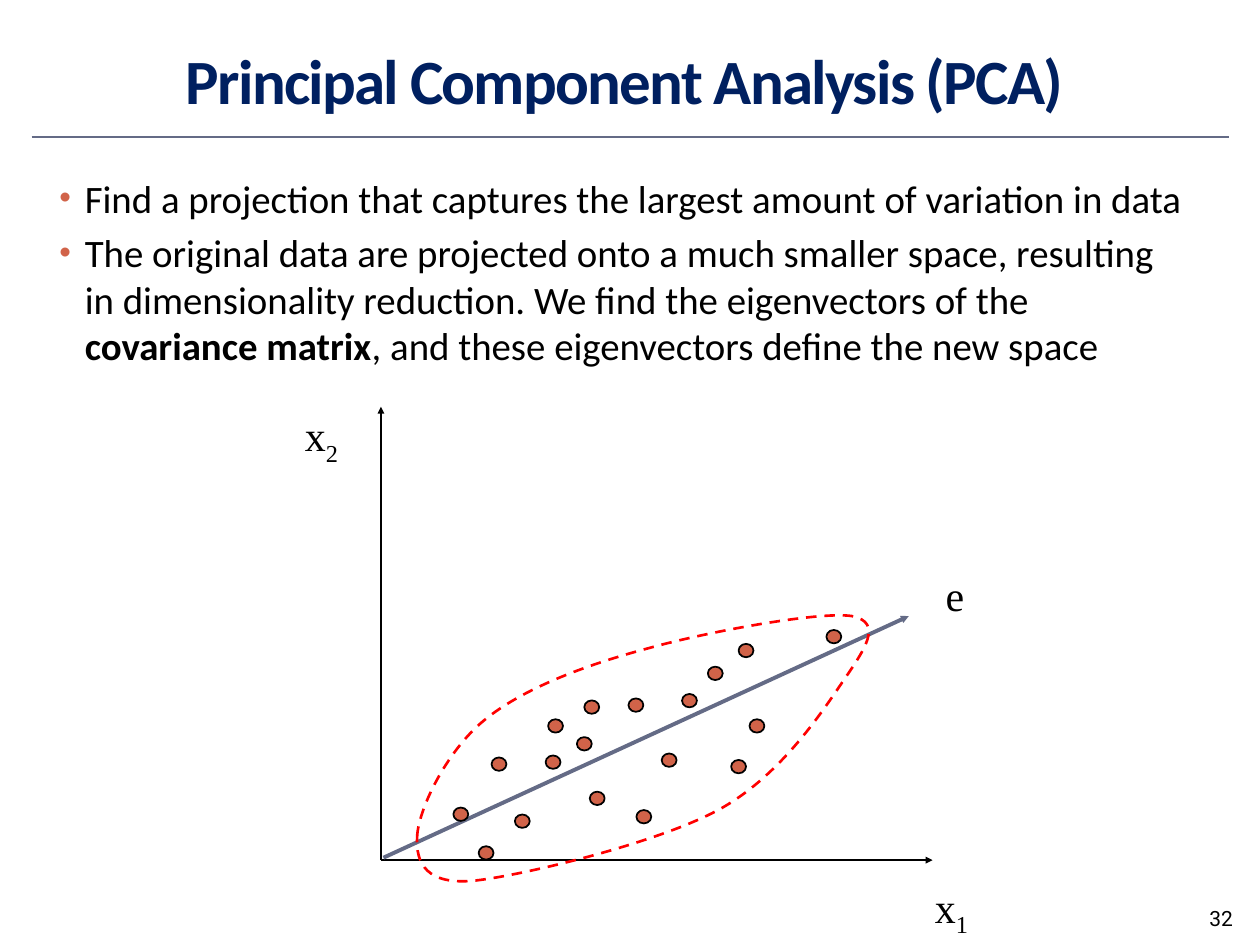
from lxml import etree
from pptx import Presentation
from pptx.dml.color import RGBColor
from pptx.enum import dml, shapes, text
from pptx.oxml import ns
from pptx.util import Cm, Pt

# Content (lengths in cm)
COLORS = {"navy": "002060", "slate": "646B86", "rust": "D16349",
          "red": "FF0000", "black": "000000"}
TITLE = "Principal Component Analysis (PCA)"
# A span is (text, style); style is "", "bold" or "sub"
BULLETS = [
    [("Find a projection that captures the largest amount of variation in data", "")],
    [("The original data are projected onto a much smaller space, resulting in "
      "dimensionality reduction. We find the eigenvectors of the ", ""),
     ("covariance matrix", "bold"),
     (", and these eigenvectors define the new space", "")],
]
PAGE_NUMBER = "32"
LABELS = [  # spans, left, top, width
    ([("x", ""), ("2", "sub")], 5.77, 8.13, 1.42),
    ([("x", ""), ("1", "sub")], 18.47, 17.63, 1.42),
    ([("e", "")], 18.73, 11.28, 1.04),
]
LABEL_HEIGHT = 1.42
ORIGIN = (7.68, 17.34)
LINES = [  # start, end, colour, points, arrow
    ((0.64, 2.76), (24.77, 2.76), "slate", 1.5, False),
    (ORIGIN, (7.68, 8.2), "black", 1, True),
    (ORIGIN, (18.8, 17.34), "black", 1, True),
    ((7.73, 17.29), (18.32, 12.42), "slate", 2.25, True),
]
DOT_SIZE = (0.3, 0.27)
DOTS = [  # left, top
    (9.91, 15.27), (11.05, 14.5), (9.14, 16.28), (11.63, 14.86), (11, 15.23),
    (13.34, 15.19), (12.83, 16.33), (11.89, 15.96), (12.67, 14.08),
    (15.11, 14.5), (16.66, 12.7), (10.38, 16.42), (13.75, 13.99),
    (14.89, 12.98), (11.78, 14.12), (14.27, 13.44), (14.74, 15.32),
    (9.65, 17.06),
]
CLOUD_START = (8.41, 16.87)
CLOUD_CURVES = [  # two control points and an end point
    ((8.43, 16.33), (8.99, 15.16), (9.75, 14.53)),
    ((10.52, 13.89), (11.79, 13.41), (13.03, 13.08)),
    ((14.27, 12.73), (16.54, 12.32), (17.17, 12.42)),
    ((17.83, 12.55), (17.42, 13.11), (16.97, 13.77)),
    ((16.54, 14.4), (15.7, 15.67), (14.48, 16.33)),
    ((13.26, 16.99), (10.62, 17.63), (9.6, 17.75)),
    ((8.59, 17.86), (8.38, 17.4), CLOUD_START),
]


def color(name):
    return RGBColor.from_string(COLORS[name])


def add_child(parent, tag, **attributes):
    child = etree.SubElement(parent, ns.qn(tag))
    for key, value in attributes.items():
        child.set(key, value)
    return child


def add_bullet(para):
    para.space_before = Pt(4.44)
    props = para._p.get_or_add_pPr()
    props.set("marL", str(Cm(0.51)))
    props.set("indent", str(-Cm(0.51)))
    add_child(add_child(props, "a:buClr"), "a:srgbClr", val=COLORS["rust"])
    add_child(props, "a:buSzPct", val="85000")
    add_child(props, "a:buFont", typeface="Arial")
    add_child(props, "a:buChar", char="•")


def add_text(page, paragraphs, place, *, font, size, tint="black", bold=False,
             align=text.PP_ALIGN.LEFT, anchor=text.MSO_ANCHOR.TOP,
             wrap=True, spacing=None, bullets=False):
    frame = page.shapes.add_textbox(*map(Cm, place)).text_frame
    frame.word_wrap = wrap
    frame.vertical_anchor = anchor
    if not wrap:
        frame.auto_size = text.MSO_AUTO_SIZE.SHAPE_TO_FIT_TEXT
    for index, spans in enumerate(paragraphs):
        para = frame.add_paragraph() if index else frame.paragraphs[0]
        para.alignment = align
        if bullets:
            add_bullet(para)
        for words, style in spans:
            span = para.add_run()
            span.text = words
            span.font.name = font
            span.font.size = Pt(size)
            span.font.bold = bold or style == "bold"
            span.font.color.rgb = color(tint)
            props = span._r.get_or_add_rPr()
            if style == "sub":
                props.set("baseline", "-25000")
            if spacing is not None:
                props.set("spc", str(spacing * 100))


def add_line(page, start, end, tint, width, arrow):
    line = page.shapes.add_connector(shapes.MSO_CONNECTOR.STRAIGHT,
                                     *map(Cm, start + end))
    line.line.color.rgb = color(tint)
    line.line.width = Pt(width)
    if arrow:
        add_child(line.line._get_or_add_ln(), "a:tailEnd",
                  type="triangle", w="sm", len="sm")
    add_child(line._element.spPr, "a:effectLst")


def add_dot(page, place):
    dot = page.shapes.add_shape(shapes.MSO_SHAPE.OVAL, *map(Cm, place + DOT_SIZE))
    dot.shadow.inherit = False
    dot.fill.solid()
    dot.fill.fore_color.rgb = color("rust")
    dot.line.color.rgb = color("black")
    dot.line.width = Pt(1)


def add_cloud(page):
    builder = page.shapes.build_freeform(*map(Cm, CLOUD_START))
    builder.add_line_segments([tuple(map(Cm, point)) for curve in CLOUD_CURVES
                               for point in curve], close=True)
    cloud = builder.convert_to_shape()
    # Join every three straight segments into one Bézier curve
    segments = list(cloud._element.iter(ns.qn("a:lnTo")))
    for first in range(0, len(segments), 3):
        curve = etree.Element(ns.qn("a:cubicBezTo"))
        segments[first].addprevious(curve)
        for segment in segments[first:first + 3]:
            curve.append(segment[0])
            segment.getparent().remove(segment)
    cloud.shadow.inherit = False
    cloud.fill.background()
    cloud.line.color.rgb = color("red")
    cloud.line.width = Pt(1.5)
    cloud.line.dash_style = dml.MSO_LINE.DASH


def main():
    deck = Presentation()
    deck.slide_width, deck.slide_height = Cm(25.4), Cm(19.05)
    page = deck.slides.add_slide(deck.slide_layouts[6])
    center, middle = text.PP_ALIGN.CENTER, text.MSO_ANCHOR.MIDDLE

    # Heading, bullets and page number
    add_text(page, [[(TITLE, "")]], (0.43, 0.42, 24.33, 2.34), font="Calibri",
             size=36, tint="navy", bold=True, align=center, anchor=middle, spacing=-1)
    add_text(page, BULLETS, (0.95, 3.39, 23.29, 4.45), font="Calibri",
             size=22.2, bullets=True)
    add_text(page, [[(PAGE_NUMBER, "")]], (24.13, 18.14, 1.27, 0.91),
             font="Roboto", size=12)

    # Title rule, axes and eigenvector
    for line in LINES:
        add_line(page, *line)

    # Data cloud
    for place in DOTS:
        add_dot(page, place)
    add_cloud(page)

    # Axis and vector labels
    for spans, left, top, width in LABELS:
        add_text(page, [spans], (left, top, width, LABEL_HEIGHT),
                 font="Times New Roman", size=24, align=center, anchor=middle,
                 wrap=False)

    deck.save("out.pptx")


if __name__ == "__main__":
    main()
